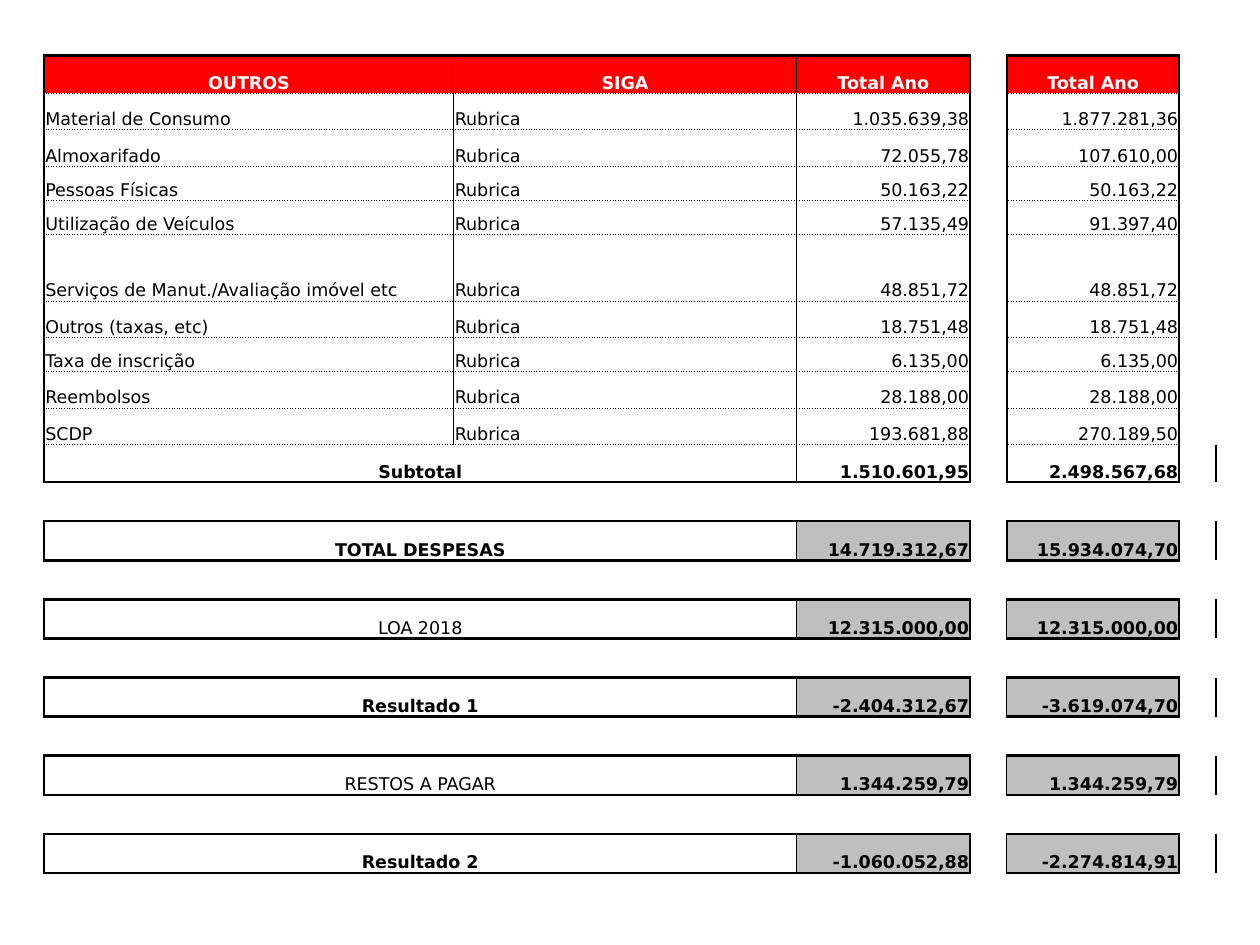
from lxml.etree import SubElement
from pptx import Presentation
from pptx.dml.color import RGBColor
from pptx.enum.text import MSO_ANCHOR, PP_ALIGN
from pptx.oxml import parse_xml
from pptx.oxml.ns import nsdecls, qn
from pptx.util import Inches, Pt

RED = RGBColor(0xFF, 0x00, 0x00)
GREY = RGBColor(0xBF, 0xBF, 0xBF)
WHITE = RGBColor(0xFF, 0xFF, 0xFF)
BLACK = RGBColor(0x00, 0x00, 0x00)

NO_GRID_STYLE = "{2D5ABB26-0587-4C30-8999-92F81FD0307C}"
FONT = "DejaVu Sans"
TEXT_SIZE = 10

# Border styles: width in points and dash
THICK, MEDIUM, THIN, DOTTED = (1.5, "solid"), (1, "solid"), (0.5, "solid"), (0.5, "sysDot")
OPPOSITE = {"L": ("R", 0, -1), "R": ("L", 0, 1), "T": ("B", -1, 0), "B": ("T", 1, 0)}

# Grid: four data columns, with a gap before and after the last
COLUMN_WIDTHS = [3.25, 2.72, 1.38, 0.29, 1.37, 0.29]
LABEL, SIGA, YEAR, OTHER_YEAR = 0, 1, 2, 4
ITEM_HEIGHTS = [0.3, 0.29, 0.29, 0.27, 0.27, 0.53, 0.29, 0.27, 0.29, 0.29, 0.3]
TOTAL_HEIGHT = 0.31

HEADER = ["OUTROS", "SIGA", "Total Ano", "Total Ano"]
EXPENSES = [
    ("Material de Consumo", "1.035.639,38", "1.877.281,36"),
    ("Almoxarifado", "72.055,78", "107.610,00"),
    ("Pessoas Físicas", "50.163,22", "50.163,22"),
    ("Utilização de Veículos", "57.135,49", "91.397,40"),
    ("Serviços de Manut./Avaliação imóvel etc", "48.851,72", "48.851,72"),
    ("Outros (taxas, etc)", "18.751,48", "18.751,48"),
    ("Taxa de inscrição", "6.135,00", "6.135,00"),
    ("Reembolsos", "28.188,00", "28.188,00"),
    ("SCDP", "193.681,88", "270.189,50"),
]
SUBTOTAL = ("Subtotal", "1.510.601,95", "2.498.567,68")
# Label, two values, bold label, left border of the last column
TOTALS = [
    ("TOTAL DESPESAS", "14.719.312,67", "15.934.074,70", True, THICK),
    ("LOA 2018", "12.315.000,00", "12.315.000,00", False, MEDIUM),
    ("Resultado 1", "-2.404.312,67", "-3.619.074,70", True, MEDIUM),
    ("RESTOS A PAGAR", "1.344.259,79", "1.344.259,79", False, MEDIUM),
    ("Resultado 2", "-1.060.052,88", "-2.274.814,91", True, MEDIUM),
]


def add_grid(page, row_heights):
    """Add an unstyled table whose cells are all compact and empty."""
    frame = page.shapes.add_table(
        len(row_heights), len(COLUMN_WIDTHS), Inches(0.35), Inches(0.44),
        Inches(sum(COLUMN_WIDTHS)), Inches(sum(row_heights)))
    table = frame.table
    table.first_row = table.horz_banding = False
    frame._element.find(".//" + qn("a:tableStyleId")).text = NO_GRID_STYLE
    for column, width in zip(table.columns, COLUMN_WIDTHS):
        column.width = Inches(width)
    for row, height in zip(table.rows, row_heights):
        row.height = Inches(height)
    margins = {"margin_left": Inches(0.01), "margin_right": Inches(0.01),
               "margin_top": Inches(0.01), "margin_bottom": 0,
               "vertical_anchor": MSO_ANCHOR.BOTTOM}
    for cell in table.iter_cells():
        for name, value in margins.items():
            setattr(cell, name, value)
        cell.fill.background()
        # Small end mark, so that empty cells do not stretch their row
        para = cell.text_frame.paragraphs[0]
        SubElement(para._p, qn("a:endParaRPr"), sz=str(TEXT_SIZE * 100))
    return table


def write_cell(cell, text, align, bold=False, color=BLACK, fill=None):
    para = cell.text_frame.paragraphs[0]
    para.alignment = align
    span = para.add_run()
    span.text = text
    formats = {"name": FONT, "size": Pt(TEXT_SIZE), "bold": bold}
    for name, value in formats.items():
        setattr(span.font, name, value)
    span.font.color.rgb = color
    if fill is not None:
        cell.fill.solid()
        cell.fill.fore_color.rgb = fill


def set_borders(borders, row, column, **sides):
    """Note each border for the cell and for the neighbour that shares it."""
    for side, style in sides.items():
        other, down, across = OPPOSITE[side]
        borders[row, column, side] = style
        borders[row + down, column + across, other] = style


def draw_borders(table, borders):
    for row in range(len(table.rows)):
        for column in range(len(table.columns)):
            properties = table.cell(row, column)._tc.get_or_add_tcPr()
            sides = [side for side in "LRTB" if (row, column, side) in borders]
            for position, side in enumerate(sides):
                width, dash = borders[row, column, side]
                properties.insert(position, parse_xml(
                    f'<a:ln{side} {nsdecls("a")} w="{Pt(width)}"><a:solidFill>'
                    f'<a:srgbClr val="{BLACK}"/></a:solidFill>'
                    f'<a:prstDash val="{dash}"/></a:ln{side}>'))


def frame_row(borders, row, top, bottom, middle=THIN, last_left=THICK):
    """Outline the wide block and the separate last column of one row."""
    set_borders(borders, row, LABEL, L=THICK, T=top, B=bottom)
    set_borders(borders, row, SIGA, R=middle, T=top, B=bottom)
    set_borders(borders, row, YEAR, R=THICK, T=top, B=bottom)
    set_borders(borders, row, OTHER_YEAR, L=last_left, R=THICK, T=top, B=bottom)


def write_header(table, borders):
    for column, text in zip((LABEL, SIGA, YEAR, OTHER_YEAR), HEADER):
        write_cell(table.cell(0, column), text, PP_ALIGN.CENTER, True, WHITE, RED)
    frame_row(borders, 0, THICK, DOTTED)
    set_borders(borders, 0, LABEL, R=THIN)


def write_values(table, row, values, **formats):
    for column, value in zip((YEAR, OTHER_YEAR), values):
        write_cell(table.cell(row, column), value, PP_ALIGN.RIGHT, **formats)


def write_expense(table, borders, row, label, *values):
    write_cell(table.cell(row, LABEL), label, PP_ALIGN.LEFT)
    write_cell(table.cell(row, SIGA), "Rubrica", PP_ALIGN.LEFT)
    write_values(table, row, values)
    frame_row(borders, row, DOTTED, DOTTED)
    set_borders(borders, row, LABEL, R=THIN)


def write_sum(table, borders, row, label, values, bold=True, fill=None,
              top=THICK, middle=MEDIUM, last_left=THICK):
    table.cell(row, LABEL).merge(table.cell(row, SIGA))
    write_cell(table.cell(row, LABEL), label, PP_ALIGN.CENTER, bold)
    write_values(table, row, values, bold=True, fill=fill)
    frame_row(borders, row, top, THICK, middle, last_left)
    borders[row, LABEL, "R"] = middle


def main():
    deck = Presentation()
    deck.slide_width, deck.slide_height = Inches(10), Inches(7.5)
    page = deck.slides.add_slide(deck.slide_layouts[6])

    # Each total has a blank row above it, and one more ends the table
    heights = ITEM_HEIGHTS + [TOTAL_HEIGHT] * (2 * len(TOTALS) + 1)
    table = add_grid(page, heights)
    borders = {}

    # Expenses and their subtotal
    write_header(table, borders)
    for row, expense in enumerate(EXPENSES, start=1):
        write_expense(table, borders, row, *expense)
    subtotal_row = len(EXPENSES) + 1
    write_sum(table, borders, subtotal_row, SUBTOTAL[0], SUBTOTAL[1:],
              top=DOTTED, middle=THIN)

    # Totals on every second row
    for index, (label, *values, bold, last_left) in enumerate(TOTALS, start=1):
        write_sum(table, borders, subtotal_row + 2 * index, label, values,
                  bold, GREY, last_left=last_left)

    draw_borders(table, borders)
    deck.save("out.pptx")


if __name__ == "__main__":
    main()
